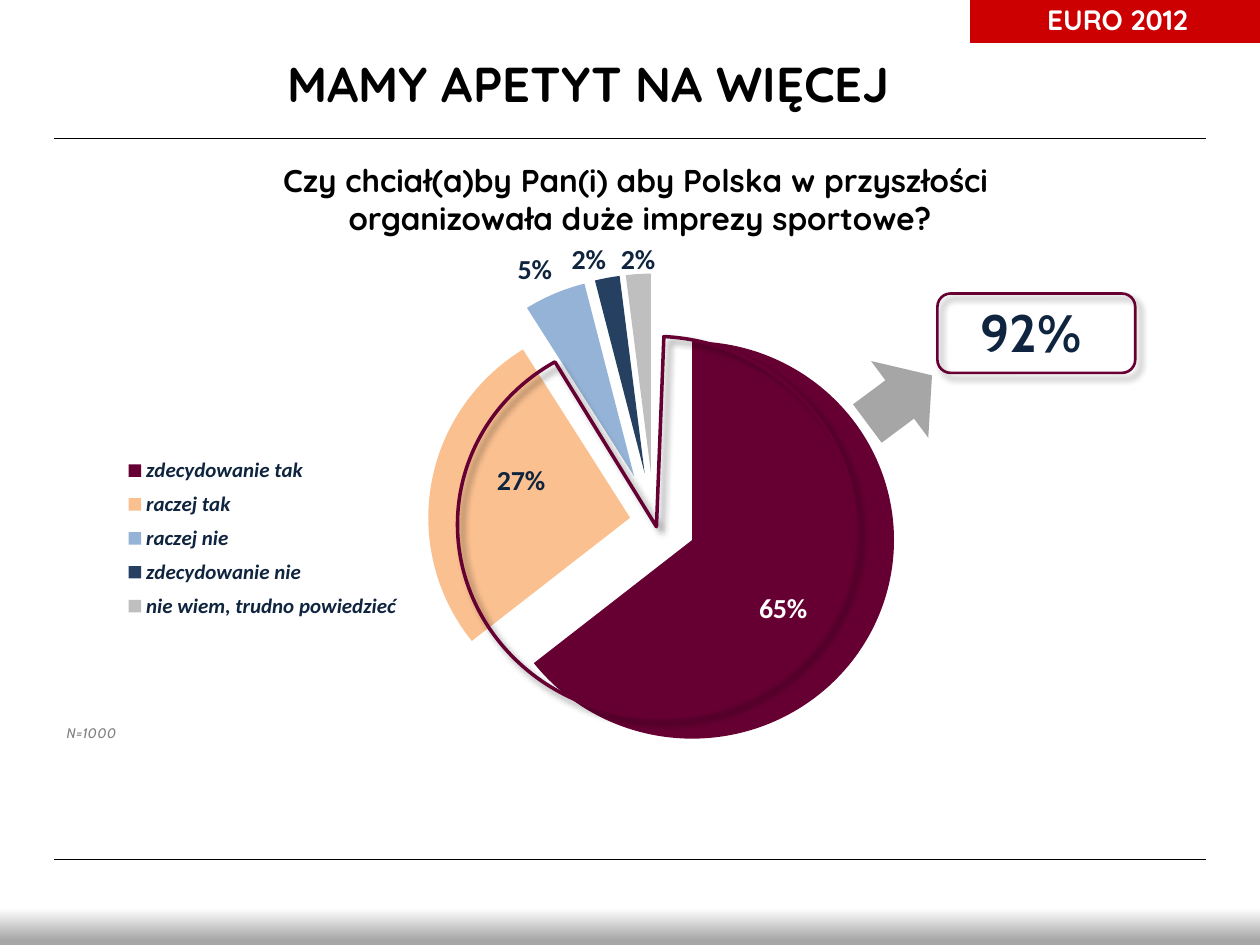
from lxml import etree
from pptx import Presentation
from pptx.chart.data import CategoryChartData
from pptx.dml.color import RGBColor
from pptx.enum.chart import XL_CHART_TYPE, XL_LABEL_POSITION as LABEL, XL_LEGEND_POSITION
from pptx.enum.shapes import MSO_CONNECTOR, MSO_SHAPE as SHAPE
from pptx.enum.text import MSO_ANCHOR, PP_ALIGN
from pptx.oxml import parse_xml
from pptx.oxml.ns import nsdecls, qn
from pptx.util import Inches, Pt

BLACK = RGBColor(0x00, 0x00, 0x00)
WHITE = RGBColor(0xFF, 0xFF, 0xFF)
RED = RGBColor(0xCC, 0x00, 0x00)
NAVY = RGBColor(0x0F, 0x24, 0x3E)
PLUM = RGBColor(0x66, 0x00, 0x33)
PEACH = RGBColor(0xFA, 0xC0, 0x90)
SKY = RGBColor(0x95, 0xB3, 0xD7)
DEEP_BLUE = RGBColor(0x25, 0x40, 0x61)
SILVER = RGBColor(0xBF, 0xBF, 0xBF)
GREY = RGBColor(0xA6, 0xA6, 0xA6)
NOTE_GREY = RGBColor(0x7F, 0x7F, 0x7F)


def style(font, name, size, color, bold=True, italic=False):
    font.name, font.size, font.bold, font.italic = name, Pt(size), bold, italic
    font.color.rgb = color


def lay_out(parent, index, x, y, w=None, h=None, inner=False, mode="edge"):
    for old in parent.findall(qn("c:layout")):
        parent.remove(old)
    target = '<c:layoutTarget val="inner"/>' if inner else ""
    sizes = "" if w is None else f'<c:w val="{w}"/><c:h val="{h}"/>'
    parent.insert(index, parse_xml(
        f'<c:layout {nsdecls("c")}><c:manualLayout>{target}'
        f'<c:xMode val="{mode}"/><c:yMode val="{mode}"/>'
        f'<c:x val="{x}"/><c:y val="{y}"/>{sizes}</c:manualLayout></c:layout>'))


prs = Presentation()
prs.slide_width, prs.slide_height = Inches(10), Inches(7.5)
slide = prs.slides.add_slide(prs.slide_layouts[5])
shapes = slide.shapes

footer = shapes.add_shape(SHAPE.RECTANGLE, Inches(0), Inches(6.8), Inches(10), Inches(0.7))
footer.shadow.inherit = False
footer.line.fill.background()
footer.fill.gradient()
footer.fill.gradient_angle = 270
for stop, color, position in zip(footer.fill.gradient_stops, (WHITE, GREY), (0.58, 0.95)):
    stop.color.rgb = color
    stop.position = position

for y, weight in ((1.1, 1), (6.82, 0.75)):
    rule = shapes.add_connector(
        MSO_CONNECTOR.STRAIGHT, Inches(0.43), Inches(y), Inches(9.57), Inches(y))
    rule.line.color.rgb = BLACK
    rule.line.width = Pt(weight)
    etree.SubElement(rule._element.spPr, qn("a:effectLst"))

tag = shapes.add_shape(SHAPE.RECTANGLE, Inches(7.7), Inches(-0.03), Inches(2.34), Inches(0.37))
tag.shadow.inherit = False
tag.fill.solid()
tag.fill.fore_color.rgb = RED
tag.line.fill.background()
tag.text_frame.text = "EURO 2012"
tag.text_frame.vertical_anchor = MSO_ANCHOR.MIDDLE
tag.text_frame.paragraphs[0].alignment = PP_ALIGN.CENTER
style(tag.text_frame.paragraphs[0].font, "Quicksand", 16, WHITE)

title = shapes.title
title.left, title.top, title.width, title.height = (
    Inches(0.17), Inches(0.31), Inches(9), Inches(0.69))
title.text_frame.text = "MAMY APETYT NA WIĘCEJ"
title.text_frame.vertical_anchor = MSO_ANCHOR.MIDDLE
title.text_frame.paragraphs[0].alignment = PP_ALIGN.CENTER
style(title.text_frame.paragraphs[0].font, "Quicksand", 28, BLACK)

question = shapes.add_textbox(Inches(0.59), Inches(1.23), Inches(8.98), Inches(0.71)).text_frame
question.word_wrap = True
question.text = "Czy chciał(a)by Pan(i) aby Polska w przyszłości \vorganizowała duże imprezy sportowe?"
question.paragraphs[0].alignment = PP_ALIGN.CENTER
style(question.paragraphs[0].font, "Quicksand", 18, BLACK)

answers = [
    ("zdecydowanie tak", 65, PLUM, 21),
    ("raczej tak", 27, PEACH, 12),
    ("raczej nie", 5, SKY, 25),
    ("zdecydowanie nie", 2, DEEP_BLUE, 25),
    ("nie wiem, trudno powiedzieć", 2, SILVER, 25),
]
data = CategoryChartData(number_format='0"%"')
data.categories = [answer for answer, *_ in answers]
data.add_series("Series 1", [share for _, share, *_ in answers])
chart = shapes.add_chart(
    XL_CHART_TYPE.PIE, Inches(0.43), Inches(1.85), Inches(7.87), Inches(5.34), data).chart
style(chart.font, "Calibri", 10, BLACK, bold=False)

chart.has_title = True
sample = chart.chart_title.text_frame
sample.text = "N=1000"
style(sample.paragraphs[0].font, "Cabin", 8, NOTE_GREY, bold=False, italic=True)
lay_out(chart.chart_title._element, 1, 0.01, 0.72)

chart.has_legend = True
chart.legend.position = XL_LEGEND_POSITION.RIGHT
chart.legend.include_in_layout = False
style(chart.legend.font, "Calibri", 12, NAVY, italic=True)
lay_out(chart.legend._element, 1, 0.07, 0.31, 0.28, 0.27)

pie = chart.plots[0]
pie.vary_by_categories = True
lay_out(pie._element.getparent(), 0, 0.4, 0.12, 0.41, 0.6, inner=True)

series = pie.series[0]
series.data_labels.show_value = True
series.data_labels.show_percentage = False
series.data_labels.position = LABEL.OUTSIDE_END
style(series.data_labels.font, "Calibri", 16, NAVY)

for index, (_, _, color, explosion) in enumerate(answers):
    slice_fill = series.points[index].format.fill
    slice_fill.solid()
    slice_fill.fore_color.rgb = color
    slice_element = series._element.findall(qn("c:dPt"))[index]
    slice_element.find(qn("c:spPr")).addprevious(
        parse_xml(f'<c:explosion {nsdecls("c")} val="{explosion}"/>'))
for index, (color, x, y) in enumerate(((WHITE, 0, 0.04), (NAVY, -0.01, -0.03))):
    label = series.points[index].data_label
    style(label.font, "Calibri", 16, color)
    label.position = LABEL.CENTER
    label_element = series._element.find(qn("c:dLbls")).findall(qn("c:dLbl"))[index]
    lay_out(label_element, 1, x, y, mode="factor")

total = shapes.add_textbox(Inches(7.68), Inches(2.33), Inches(1.73), Inches(0.62)).text_frame
total.word_wrap = True
total.text = "92%"
style(total.paragraphs[0].font, "Cabin", 30, NAVY)

arrow = shapes.add_shape(SHAPE.DOWN_ARROW, Inches(6.76), Inches(2.85), Inches(0.76), Inches(0.64))
arrow.rotation = 233.3
arrow.shadow.inherit = False
arrow.fill.solid()
arrow.fill.fore_color.rgb = GREY
arrow.line.fill.background()

yes_outline = shapes.add_shape(SHAPE.PIE, Inches(3.7), Inches(2.6), Inches(3.02), Inches(3.16))
yes_outline.rotation = 277.4
yes_outline.adjustments[0] = 212.91
yes_outline.adjustments[1] = 192.59
total_frame = shapes.add_shape(
    SHAPE.ROUNDED_RECTANGLE, Inches(7.44), Inches(2.33), Inches(1.57), Inches(0.63))
for outline, weight in ((yes_outline, 2), (total_frame, 1.5)):
    outline.fill.background()
    outline.line.color.rgb = PLUM
    outline.line.width = Pt(weight)
    outline._element.spPr.append(parse_xml(
        f'<a:effectLst {nsdecls("a")}><a:outerShdw blurRad="{Pt(4)}" dist="{Pt(4)}" '
        'dir="2700000" algn="tl" rotWithShape="0"><a:srgbClr val="000000">'
        '<a:alpha val="40000"/></a:srgbClr></a:outerShdw></a:effectLst>'))

prs.save("out.pptx")
